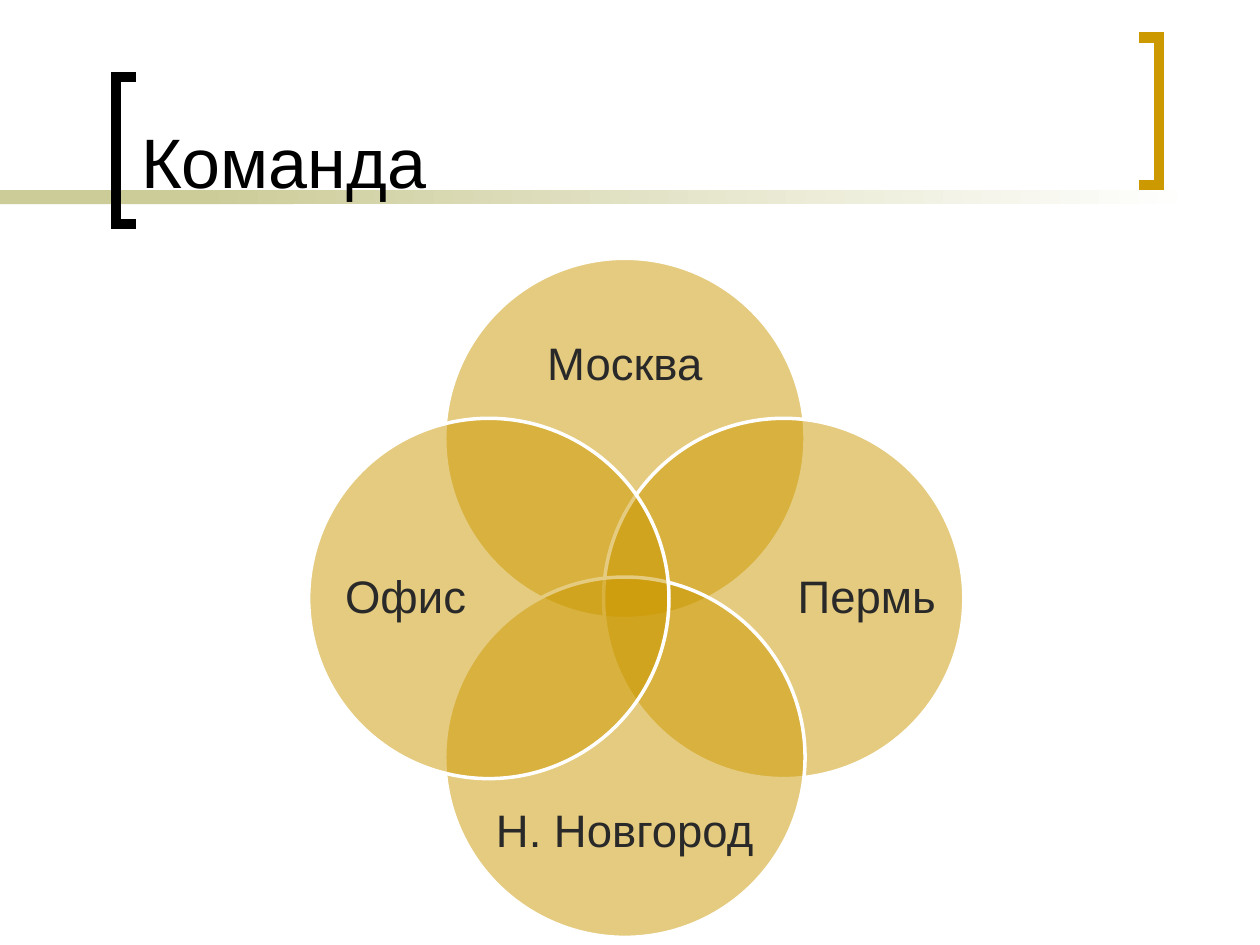
from lxml import etree
from pptx import Presentation
from pptx.dml.color import RGBColor
from pptx.enum import shapes, text
from pptx.oxml import ns
from pptx.util import Inches, Pt

BLACK = RGBColor(0x00, 0x00, 0x00)
WHITE = RGBColor(0xFF, 0xFF, 0xFF)
GOLD = RGBColor(0xCC, 0x99, 0x00)
SAND = RGBColor(0xCC, 0xCC, 0x99)
DARK = RGBColor(0x29, 0x29, 0x29)

# Content
TITLE = "Команда"
WIDE, TALL = (2.2, 0.91), (1.1, 2.2)  # label box sizes
# label, circle centre offset, label centre offset, label box size
TEAMS = [
    ("Москва", (0, -1.27), (0, -1.85), WIDE),
    ("Пермь", (1.26, 0), (1.92, 0), TALL),
    ("Н. Новгород", (0, 1.26), (0, 1.86), WIDE),
    ("Офис", (-1.08, 0), (-1.74, 0), TALL),
]
CENTRE = (4.96, 4.75)
DIAMETER = 2.86
# open side x, spine x, top y, colour
BRACKETS = [(1.08, 0.92, 0.61, BLACK), (9.04, 9.2, 0.3, GOLD)]
BRACKET_HEIGHT = 1.17
BAR_TOP, BAR_HEIGHT = 1.51, 0.11


def sub(parent, tag, **attrs):
    return etree.SubElement(parent, ns.qn(tag), attrs)


def centred_box(offset, size):
    x, y = (c + o - d / 2 for c, o, d in zip(CENTRE, offset, size))
    return [Inches(v) for v in (x, y, *size)]


def write(tf, words, size, color, **frame):
    tf.word_wrap = True
    for name, value in frame.items():
        setattr(tf, name, value)
    p = tf.paragraphs[0]
    r = p.add_run()
    r.text = words
    for name, value in {"name": "Arial", "size": Pt(size)}.items():
        setattr(r.font, name, value)
    r.font.color.rgb = color
    return p


def add_bar(s, left, width):
    bar = s.shapes.add_shape(shapes.MSO_SHAPE.RECTANGLE, Inches(left),
                             Inches(BAR_TOP), Inches(width), Inches(BAR_HEIGHT))
    bar.shadow.inherit = False
    bar.line.fill.background()
    return bar.fill


def add_bracket(s, open_x, spine_x, top, color):
    bottom = top + BRACKET_HEIGHT
    points = [(open_x, bottom), (spine_x, bottom), (spine_x, top), (open_x, top)]
    points = [(Inches(x), Inches(y)) for x, y in points]
    builder = s.shapes.build_freeform(*points[0])
    builder.add_line_segments(points[1:], close=False)
    sp = builder.convert_to_shape()
    sp.shadow.inherit = False
    sp.fill.background()
    sp.line.color.rgb = color
    sp.line.width = Pt(6)
    sub(sp.element.spPr.find(ns.qn("a:ln")), "a:miter", lim="800000")


def add_circle(s, offset):
    sp = s.shapes.add_shape(shapes.MSO_SHAPE.OVAL,
                            *centred_box(offset, (DIAMETER, DIAMETER)))
    sp.shadow.inherit = False
    sp.fill.solid()
    sp.fill.fore_color.rgb = GOLD
    color = sp.element.spPr.find(ns.qn("a:solidFill"))[0]
    sub(color, "a:alpha", val="50000")
    sp.line.color.rgb = WHITE
    sp.line.width = Pt(2)


def add_label(s, words, offset, size):
    tf = s.shapes.add_textbox(*centred_box(offset, size)).text_frame
    p = write(tf, words, 26, DARK, vertical_anchor=text.MSO_ANCHOR.MIDDLE,
              margin_left=0, margin_right=0, margin_top=0, margin_bottom=0)
    p.alignment = text.PP_ALIGN.CENTER
    p.line_spacing = 0.9


def main():
    prs = Presentation()
    prs.slide_width, prs.slide_height = Inches(10), Inches(7.5)
    s = prs.slides.add_slide(prs.slide_layouts[5])

    # Rule under the title: solid part, then a fade to white
    solid = add_bar(s, 0, 2.33)
    solid.solid()
    solid.fore_color.rgb = SAND
    fade = add_bar(s, 1.58, 7.92)
    fade.gradient()
    fade.gradient_angle = 0
    for stop, position, color in zip(fade.gradient_stops, (0, 1), (SAND, WHITE)):
        stop.position = position
        stop.color.rgb = color

    for bracket in BRACKETS:
        add_bracket(s, *bracket)

    # Title, brought in front of the rule
    title = s.shapes.title
    title.element.getparent().append(title.element)
    place = {"left": 1.02, "top": 0.11, "width": 7.83, "height": 1.55}
    for name, value in place.items():
        setattr(title, name, Inches(value))
    p = write(title.text_frame, TITLE, 40, BLACK,
              vertical_anchor=text.MSO_ANCHOR.BOTTOM,
              auto_size=text.MSO_AUTO_SIZE.NONE)
    p.alignment = text.PP_ALIGN.LEFT

    # Overlapping circles with their labels
    for words, circle_offset, label_offset, label_size in TEAMS:
        add_circle(s, circle_offset)
        add_label(s, words, label_offset, label_size)

    prs.save("out.pptx")


if __name__ == "__main__":
    main()
